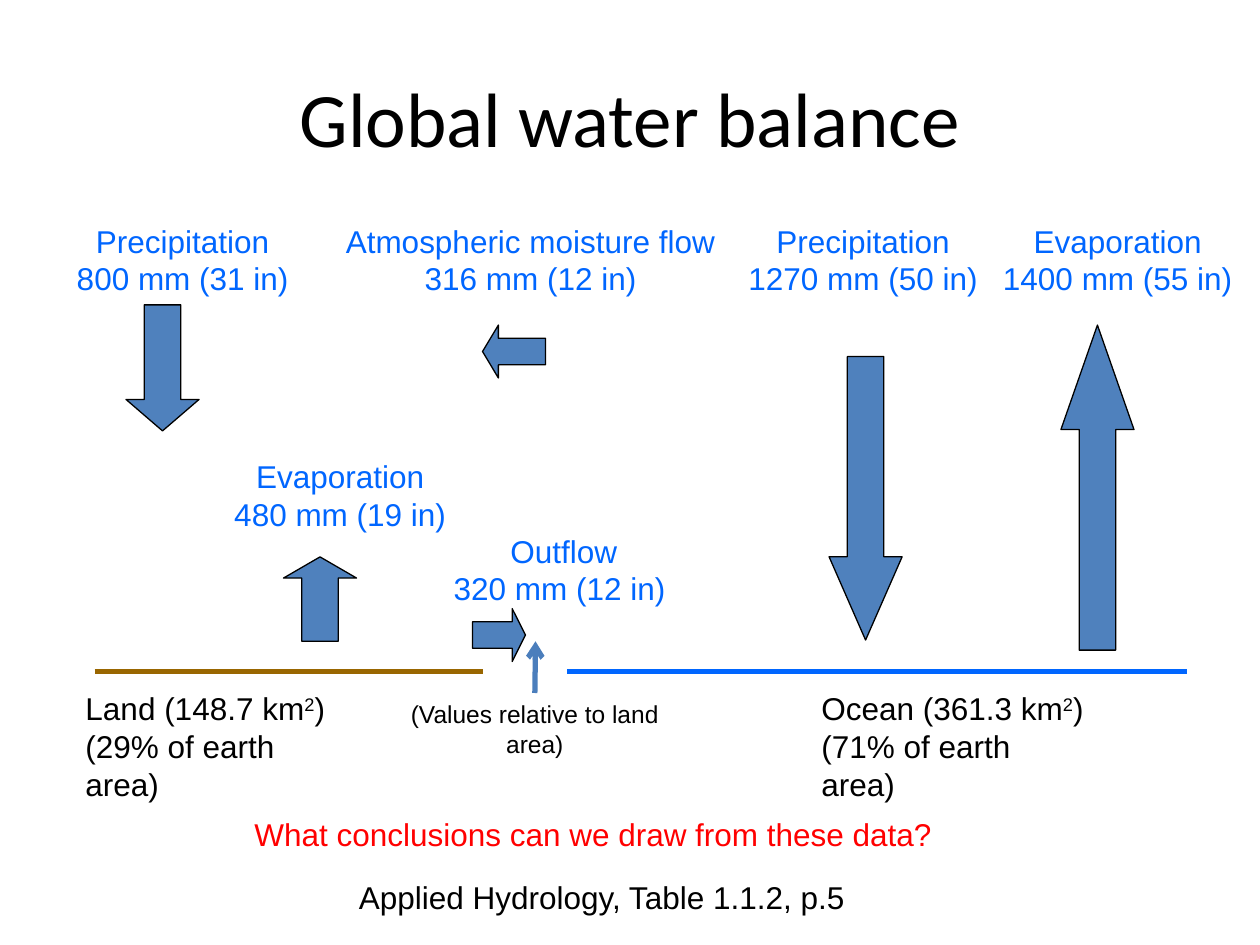
from pptx import Presentation
from pptx.dml.color import RGBColor
from pptx.enum.shapes import MSO_CONNECTOR as Link, MSO_SHAPE as Shape
from pptx.enum.text import MSO_ANCHOR as Anchor, MSO_AUTO_SIZE as Fit, PP_ALIGN as Align
from pptx.oxml.ns import qn
from pptx.util import Inches, Pt
from lxml import etree

BLACK = RGBColor(0x00, 0x00, 0x00)
BLUE = RGBColor(0x00, 0x66, 0xFF)
BROWN = RGBColor(0x99, 0x66, 0x00)
RED = RGBColor(0xFF, 0x00, 0x00)
STEEL = RGBColor(0x4F, 0x81, 0xBD)
POINTER = RGBColor(0x4B, 0x7E, 0xBC)

deck = Presentation()
deck.slide_width, deck.slide_height = Inches(10), Inches(7.5)
slide = deck.slides.add_slide(deck.slide_layouts[5])
shapes = slide.shapes


def add_text(text, x, y, w, h, size=18, color=BLACK, align=Align.LEFT, wrap=False):
    """Add a text box; a part between ^ marks is superscript."""
    box = shapes.add_textbox(Inches(x), Inches(y), Inches(w), Inches(h))
    frame = box.text_frame
    frame.word_wrap = wrap
    frame.auto_size = Fit.SHAPE_TO_FIT_TEXT
    for i, line in enumerate(text.split("\n")):
        para = frame.paragraphs[0] if i == 0 else frame.add_paragraph()
        para.alignment = align
        for j, part in enumerate(line.split("^")):
            run = para.add_run()
            run.text = part
            run.font.name = "Arial"
            run.font.size = Pt(size)
            run.font.color.rgb = color
            if j % 2:
                run.font._element.set("baseline", "30000")
    return box


def add_line(x1, y1, x2, y2, color):
    line = shapes.add_connector(Link.STRAIGHT, Inches(x1), Inches(y1), Inches(x2), Inches(y2))
    line.line.color.rgb = color
    line.line.width = Pt(3)
    etree.SubElement(line._element.spPr, qn("a:effectLst"))
    return line


# Title
title = shapes.title
title.left, title.top = Inches(0.5), Inches(0.3)
title.width, title.height = Inches(9), Inches(1.25)
title.text = "Global water balance"
title.text_frame.vertical_anchor = Anchor.MIDDLE
para = title.text_frame.paragraphs[0]
para.alignment = Align.CENTER
para.font.name = "Calibri"
para.font.size = Pt(44)
para.font.color.rgb = BLACK

# Land and ocean surfaces
add_line(0.75, 5.33, 3.83, 5.33, BROWN)
add_line(4.5, 5.33, 9.42, 5.33, BLUE)
add_text("Land (148.7 km^2^)\n(29% of earth area)", 0.58, 5.42, 2.35, 0.7)
add_text("Ocean (361.3 km^2^)\n(71% of earth area)", 6.42, 5.42, 2.35, 0.7)

# Flow arrows: kind, left, top, width, height, head length
flows = [
    (Shape.DOWN_ARROW, 1, 2.42, 0.58, 1, 0.43),
    (Shape.UP_ARROW, 2.25, 4.42, 0.58, 0.67, 0.29),
    (Shape.RIGHT_ARROW, 3.75, 4.83, 0.42, 0.42, 0.25),
    (Shape.DOWN_ARROW, 6.58, 2.83, 0.58, 2.25, 1.14),
    (Shape.UP_ARROW, 8.42, 2.58, 0.58, 2.58, 1.43),
    (Shape.LEFT_ARROW, 3.83, 2.58, 0.5, 0.42, 0.3),
]
for kind, x, y, w, h, head in flows:
    arrow = shapes.add_shape(kind, Inches(x), Inches(y), Inches(w), Inches(h))
    arrow.adjustments[0] = 0.5
    arrow.adjustments[1] = head
    arrow.shadow.inherit = False
    arrow.fill.solid()
    arrow.fill.fore_color.rgb = STEEL
    arrow.line.color.rgb = BLACK
    arrow.line.width = Pt(0.75)

# Flow labels: text, left, top, width
labels = [
    ("Precipitation\n800 mm (31 in)", 0.5, 1.71, 1.9),
    ("Evaporation\n480 mm (19 in)", 1.75, 3.58, 1.9),
    ("Outflow\n320 mm (12 in) ", 3.49, 4.17, 1.97),
    ("Precipitation\n1270 mm (50 in)", 5.83, 1.71, 2.04),
    ("Evaporation\n1400 mm (55 in)", 7.85, 1.71, 2.04),
]
for text, x, y, w in labels:
    add_text(text, x, y, w, 0.71, color=BLUE, align=Align.CENTER)
add_text("Atmospheric moisture flow 316 mm (12 in)", 2.5, 1.71, 3.42, 0.7,
         color=BLUE, align=Align.CENTER, wrap=True)

# Question and source
add_text("What conclusions can we draw from these data?", 1.92, 6.42, 5.58, 0.4, color=RED)
add_text("Applied Hydrology, Table 1.1.2, p.5", 2.75, 6.92, 4.1, 0.4)

# Note with its pointer
note = add_text("(Values relative to land area)", 3.08, 5.5, 2.33, 0.57,
                size=14, align=Align.CENTER, wrap=True)
link = add_line(4.25, 5.5, 4.25, 5.09, POINTER)
link.begin_connect(note, 0)
etree.SubElement(link.line._get_or_add_ln(), qn("a:tailEnd"), type="arrow")

deck.save("out.pptx")
